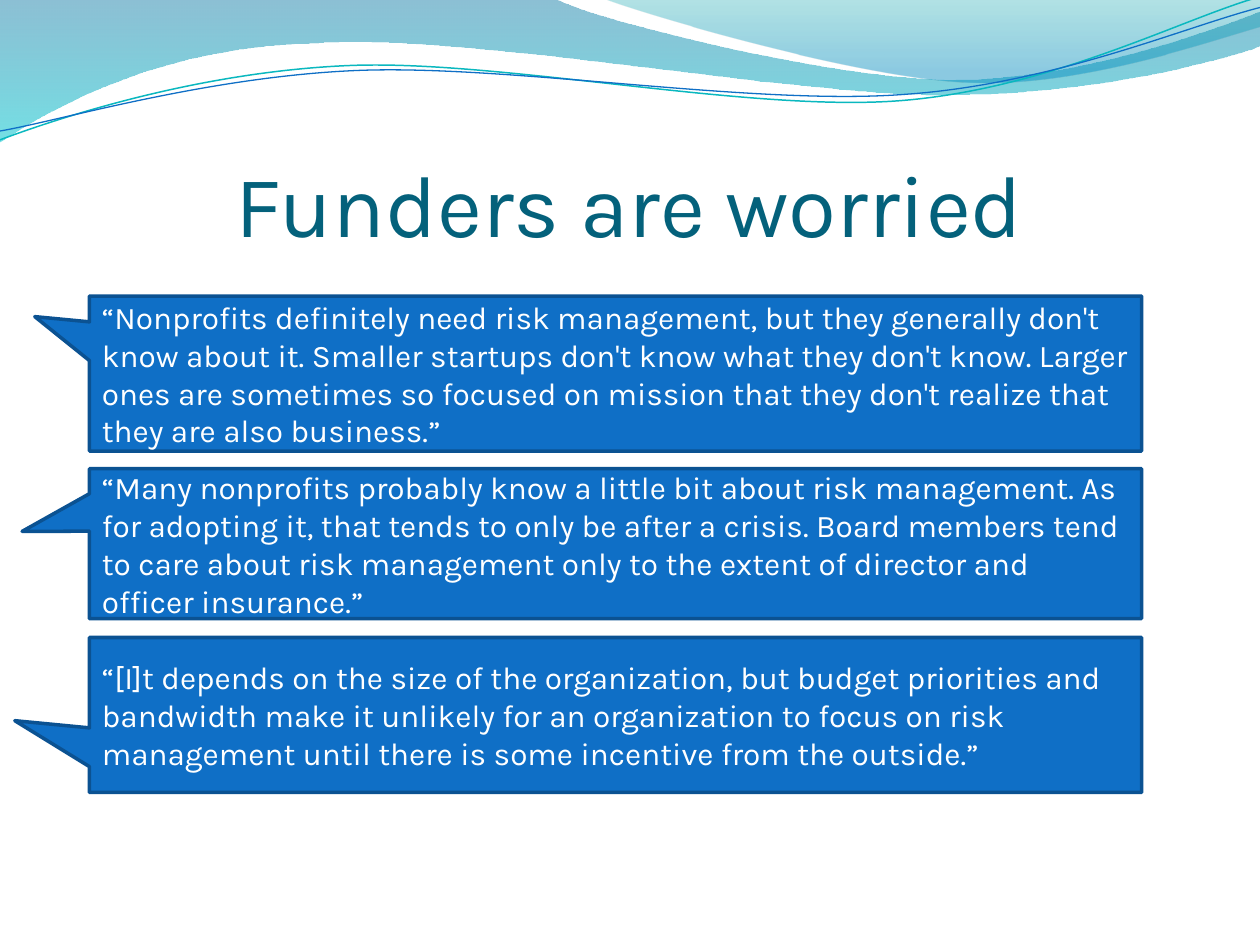
import math

from lxml import etree
from pptx import Presentation
from pptx.dml.color import RGBColor
from pptx.enum import shapes, text
from pptx.oxml.ns import qn
from pptx.util import Inches, Pt

FONT = "Karla"
COLORS = {
    "title": "04617B", "callout": "0F6FC6", "callout edge": "0B5292", "white": "FFFFFF",
    "teal line": "0AB8BF", "blue line": "0F6FC6",
    "wave top": "0074A1", "wave bottom": "00C6CF",
    "crest top": "00A1A9", "crest bottom": "008BBF",
}


def color(name):
    return RGBColor.from_string(COLORS[name])


def add_curve(container, start, segments, close):
    """Draw a path of line (one point) and cubic Bezier (three point) segments."""
    vertices = [(Inches(x), Inches(y)) for segment in segments for x, y in segment]
    builder = container.build_freeform(Inches(start[0]), Inches(start[1]))
    builder.add_line_segments(vertices, close=close)
    shape = builder.convert_to_shape()
    shape.shadow.inherit = False
    line_steps = iter(list(shape._element.spPr.iter(qn("a:lnTo"))))
    for segment in segments:
        steps = [next(line_steps) for _ in segment]
        if len(steps) == 3:
            curve = etree.Element(qn("a:cubicBezTo"))
            steps[0].addprevious(curve)
            for step in steps:
                curve.append(step[0])
                step.getparent().remove(step)
    return shape


presentation = Presentation()
presentation.slide_width = Inches(10)
presentation.slide_height = Inches(7.5)
slide = presentation.slides.add_slide(presentation.slide_layouts[6])

# Translucent waves: start, segments, gradient stops (colour, position, opacity %)
waves = [
    ((0, 0), [
        [(4.4, -0.01)],
        [(4.76, 0.17), (6.64, 0.63), (7.58, 0.63)],
        [(8.53, 0.63), (9.58, 0.26), (10, 0.09)],
        [(10.01, 0.36)],
        [(9.83, 0.44), (8.7, 0.76), (7.46, 0.75)],
        [(6.22, 0.75), (3.82, 0.28), (2.57, 0.34)],
        [(1.29, 0.36), (0.46, 0.83), (-0.01, 1.13)],
        [(0, 0)],
    ], [("wave top", 0, 45), ("wave bottom", 1, 55)]),
    ((4.79, -0.01), [
        [(5.09, 0.11), (6.82, 0.62), (7.69, 0.65)],
        [(8.56, 0.69), (9.61, 0.32), (10, 0.21)],
        [(10, 0)],
        [(4.79, -0.01)],
    ], [("crest top", 0, 30), ("crest bottom", 0.8, 45)]),
]
for start, segments, stops in waves:
    wave = add_curve(slide.shapes, start, segments, close=True)
    wave.line.fill.background()
    wave.fill.gradient()
    wave.fill.gradient_angle = 270
    for stop, (name, position, _) in zip(wave.fill.gradient_stops, stops):
        stop.color.rgb = color(name)
        stop.position = position
    stop_colors = wave._element.spPr.iter(qn("a:srgbClr"))
    for stop_color, (_, _, opacity) in zip(stop_colors, stops):
        etree.SubElement(stop_color, qn("a:alpha")).set("val", str(opacity * 1000))

# Thin lines below the waves, tilted as shapes: colour, width, centre, start, segments
TILT = -2.7
wave_lines = [
    ("teal line", 0.85, (4.99, 0.58), (0, 1.11), [
        [(0.48, 0.93), (1.58, 0.57), (2.77, 0.52)],
        [(3.95, 0.47), (5.93, 0.89), (7.13, 0.8)],
        [(8.33, 0.71), (9.38, 0.15), (9.98, -0.02)],
    ]),
    ("blue line", 0.75, (5, 0.59), (0, 1.04), [
        [(0.47, 0.96), (1.64, 0.61), (2.83, 0.56)],
        [(4.03, 0.51), (5.97, 0.84), (7.17, 0.75)],
        [(8.36, 0.67), (9.41, 0.21), (10, 0.06)],
    ]),
]
cosine, sine = math.cos(math.radians(-TILT)), math.sin(math.radians(-TILT))
line_group = slide.shapes.add_group_shape()
for name, width, (center_x, center_y), start, segments in wave_lines:
    level_segments = [
        [(center_x + (x - center_x) * cosine - (y - center_y) * sine,
          center_y + (x - center_x) * sine + (y - center_y) * cosine) for x, y in segment]
        for segment in [[start], *segments]
    ]
    wave_line = add_curve(line_group.shapes, level_segments[0][0], level_segments[1:],
                          close=False)
    wave_line.rotation = TILT
    wave_line.fill.background()
    wave_line.line.color.rgb = color(name)
    wave_line.line.width = Pt(width)

title = slide.shapes.add_textbox(Inches(0.5), Inches(0.77), Inches(9), Inches(1.25))
frame = title.text_frame
frame.word_wrap = True
frame.vertical_anchor = text.MSO_ANCHOR.BOTTOM
frame.margin_left = frame.margin_right = frame.margin_bottom = 0
frame.margin_top = Inches(0.05)
paragraph = frame.paragraphs[0]
paragraph.alignment = text.PP_ALIGN.CENTER
run = paragraph.add_run()
run.text = "Funders are worried"
run.font.name = FONT
run.font.size = Pt(50)
run.font.color.rgb = color("title")

# Quotes: top, height, right margin, pointer tip relative to the centre, wording
quotes = [
    (2.35, 1.23, 0.1, (-0.552, -0.367),
     "“Nonprofits definitely need risk management, but they generally don't know about it. "
     "Smaller startups don't know what they don't know. Larger ones are sometimes so focused "
     "on mission that they don't realize that they are also business.”"),
    (3.72, 1.19, 0.12, (-0.564, -0.082),
     "“Many nonprofits probably know a little bit about risk management. As for adopting it, "
     "that tends to only be after a crisis. Board members tend to care about risk management "
     "only to the extent of director and officer insurance.”"),
    (5.06, 1.23, 0.1, (-0.571, 0.037),
     "“[I]t depends on the size of the organization, but budget priorities and bandwidth make "
     "it unlikely for an organization to focus on risk management until there is some "
     "incentive from the outside.”"),
]
for top, height, right_margin, tip, wording in quotes:
    callout = slide.shapes.add_shape(shapes.MSO_SHAPE.RECTANGULAR_CALLOUT,
                                     Inches(0.71), Inches(top), Inches(8.35), Inches(height))
    callout.adjustments[0], callout.adjustments[1] = tip
    callout.shadow.inherit = False
    callout.fill.solid()
    callout.fill.fore_color.rgb = color("callout")
    callout.line.color.rgb = color("callout edge")
    callout.line.width = Pt(2)
    frame = callout.text_frame
    frame.word_wrap = True
    frame.margin_right = Inches(right_margin)
    frame.vertical_anchor = text.MSO_ANCHOR.MIDDLE
    paragraph = frame.paragraphs[0]
    paragraph.alignment = text.PP_ALIGN.LEFT
    run = paragraph.add_run()
    run.text = wording
    run.font.name = FONT
    run.font.size = Pt(18)
    run.font.color.rgb = color("white")

presentation.save("out.pptx")
